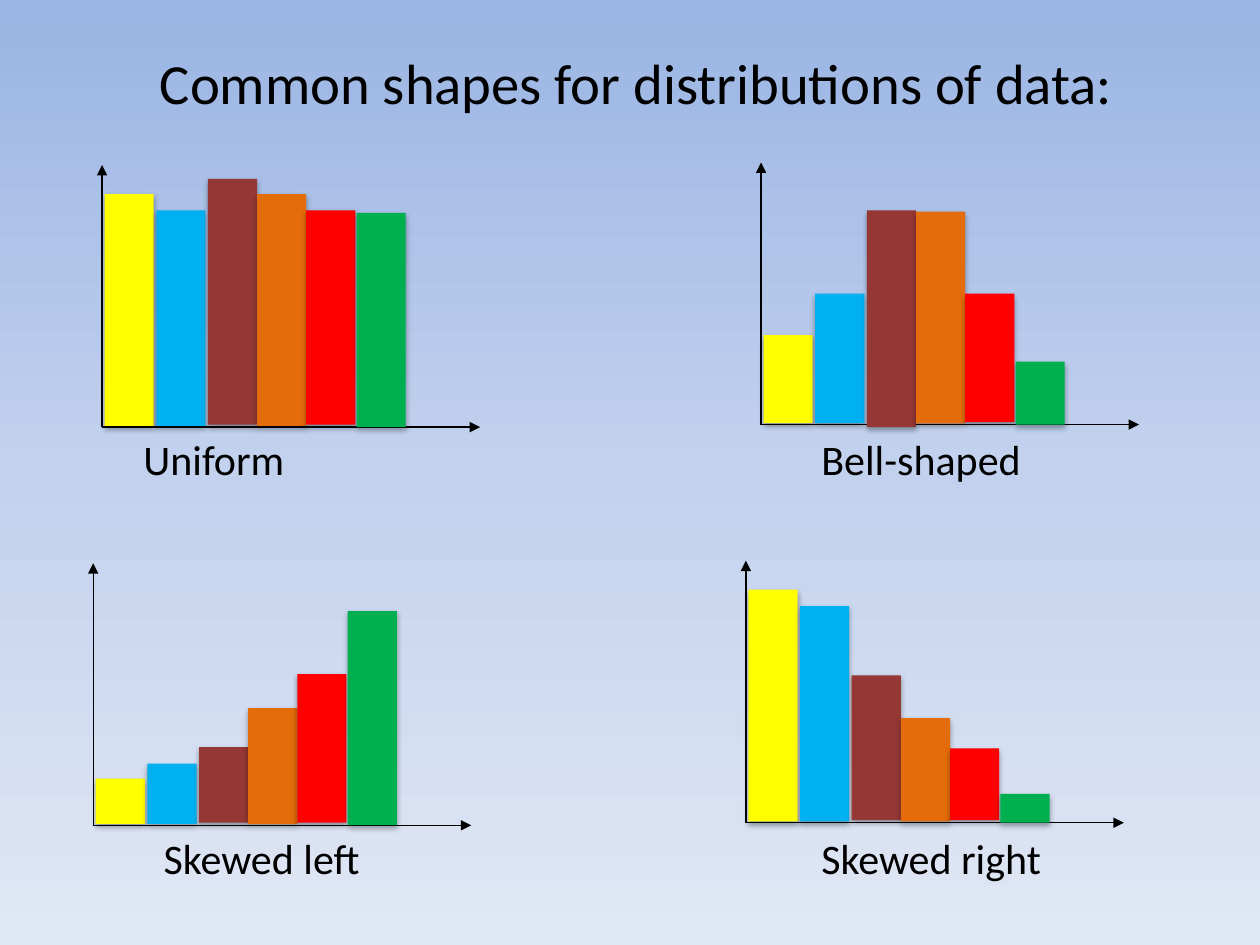
import copy

import pptx
import pptx.dml.color
import pptx.enum.shapes
import pptx.enum.text
import pptx.oxml
import pptx.oxml.ns
import pptx.util
from pptx.util import Inches

COLORS = {
    "sky top": "9AB5E4", "sky middle": "C2D1ED", "sky bottom": "E1E8F5",
    "ink": "000000", "yellow": "FFFF00", "blue": "00B0F0", "brown": "953735",
    "orange": "E46C0A", "red": "FF0000", "green": "00B050",
}
BAR_COLORS = ["yellow", "blue", "brown", "orange", "red", "green"]
BAR_OFFSETS = [0.02, 0.43, 0.84, 1.23, 1.62, 2.02]  # from the vertical axis
BAR_LIFTS = [0.01, 0.01, 0.02, 0.01, 0.02, 0]  # above the horizontal axis
BAR_WIDTH = 0.39
AXIS_LENGTH, AXIS_HEIGHT = 3, 2.08

# axis origin, label box (left, top, width), label, bar heights, overhang by bar
CHARTS = [
    ((0.81, 3.39), (1.04, 3.39, 1.32), "Uniform",
     [1.84, 1.71, 1.95, 1.84, 1.7, 1.7], {}),
    ((6.04, 3.37), (6.42, 3.39, 1.99), "Bell-shaped",
     [0.7, 1.03, 1.72, 1.68, 1.02, 0.5], {2: 0.04}),
    ((0.74, 6.55), (1.2, 6.56, 2.38), "Skewed left",
     [0.36, 0.48, 0.6, 0.92, 1.18, 1.7], {}),
    ((5.92, 6.53), (6.42, 6.56, 2.23), "Skewed right",
     [1.84, 1.71, 1.15, 0.82, 0.57, 0.23], {}),
]


def color(name):
    return pptx.dml.color.RGBColor.from_string(COLORS[name])


def drawing_xml(markup):
    """Parse one DrawingML element, adding the namespace to its root tag."""
    tag, rest = markup.split(" ", 1)
    return pptx.oxml.parse_xml(f"{tag} {pptx.oxml.ns.nsdecls('a')} {rest}")


class SlideBuilder:
    def __init__(self, page, font):
        self.page = page
        self.font = font

    def background(self, stops):
        fill = self.page.background.fill
        fill.gradient()
        fill.gradient_angle = 270
        stop_list = self.page.element.find(".//" + pptx.oxml.ns.qn("a:gsLst"))
        while len(stop_list) < len(stops):
            stop_list.append(copy.deepcopy(stop_list[0]))
        for stop, (position, name) in zip(fill.gradient_stops, stops):
            stop.position = position
            stop.color.rgb = color(name)

    def set_text(self, frame, text, size):
        frame.text = text
        frame.word_wrap = True
        for span in frame.paragraphs[0].runs:
            span.font.name = self.font
            span.font.size = pptx.util.Pt(size)
            span.font.color.rgb = color("ink")

    def title(self, text, left, top, width, height):
        box = self.page.shapes.title
        box.left, box.top = Inches(left), Inches(top)
        box.width, box.height = Inches(width), Inches(height)
        frame = box.text_frame
        self.set_text(frame, text, 32.4)
        frame.auto_size = pptx.enum.text.MSO_AUTO_SIZE.NONE
        frame.vertical_anchor = pptx.enum.text.MSO_ANCHOR.TOP
        frame.margin_top = Inches(0.08)
        frame.paragraphs[0].alignment = pptx.enum.text.PP_ALIGN.CENTER

    def label(self, text, left, top, width):
        box = self.page.shapes.add_textbox(
            Inches(left), Inches(top), Inches(width), Inches(0.51))
        self.set_text(box.text_frame, text, 24)
        box.text_frame.auto_size = pptx.enum.text.MSO_AUTO_SIZE.SHAPE_TO_FIT_TEXT

    def axes(self, x, y):
        group = self.page.shapes.add_group_shape()
        for end_x, end_y in [(x + AXIS_LENGTH, y), (x, y - AXIS_HEIGHT)]:
            axis = group.shapes.add_connector(
                pptx.enum.shapes.MSO_CONNECTOR.STRAIGHT,
                Inches(x), Inches(y), Inches(end_x), Inches(end_y))
            axis.line.color.rgb = color("ink")
            axis.line.width = pptx.util.Pt(0.75)
            properties = axis.element.spPr
            properties.find(pptx.oxml.ns.qn("a:ln")).append(
                drawing_xml('<a:tailEnd type="triangle"/>'))
            properties.append(drawing_xml("<a:effectLst />"))

    def bar(self, name, left, bottom, height):
        bar = self.page.shapes.add_shape(
            pptx.enum.shapes.MSO_SHAPE.RECTANGLE, Inches(left),
            Inches(bottom - height), Inches(BAR_WIDTH), Inches(height))
        bar.fill.solid()
        bar.fill.fore_color.rgb = color(name)
        bar.line.fill.background()
        bar.element.spPr.append(drawing_xml(
            '<a:effectLst ><a:outerShdw blurRad="40000" dist="23000" '
            'dir="5400000" rotWithShape="0">'
            f'<a:srgbClr val="{COLORS["ink"]}"><a:alpha val="35000"/></a:srgbClr>'
            "</a:outerShdw></a:effectLst>"))

    def histogram(self, origin, label_box, label, heights, overhangs):
        x, y = origin
        self.axes(x, y)
        self.label(label, *label_box)
        columns = zip(BAR_COLORS, BAR_OFFSETS, BAR_LIFTS, heights)
        for index, (name, offset, lift, height) in enumerate(columns):
            bottom = y - lift + overhangs.get(index, 0)
            self.bar(name, x + offset, bottom, height)


def main():
    deck = pptx.Presentation()
    deck.slide_width, deck.slide_height = Inches(10), Inches(7.5)
    title_only = deck.slide_layouts[5]
    builder = SlideBuilder(deck.slides.add_slide(title_only), "Calibri")
    builder.background([(0, "sky top"), (0.5, "sky middle"), (1, "sky bottom")])
    builder.title("Common shapes for distributions of data:", 0.3, 0.3, 9.5, 1.25)
    for chart in CHARTS:
        builder.histogram(*chart)
    deck.save("out.pptx")


if __name__ == "__main__":
    main()
